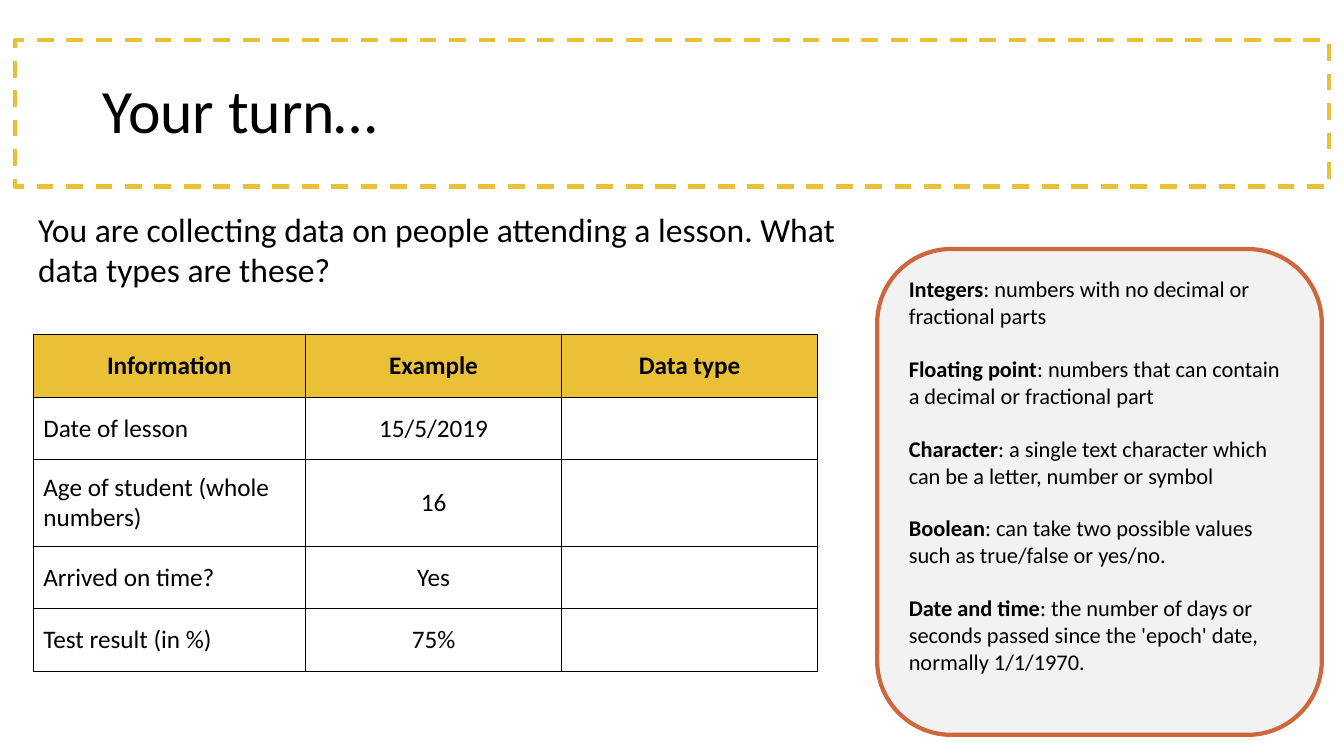
from lxml.etree import SubElement
from pptx import Presentation
from pptx.dml.color import RGBColor
from pptx.enum.dml import MSO_LINE
from pptx.enum.shapes import MSO_SHAPE
from pptx.enum.text import MSO_ANCHOR, PP_ALIGN
from pptx.oxml.ns import qn
from pptx.util import Inches, Pt

COLORS = {
    "text": "000000",
    "gold": "EAC036",
    "panel": "F2F2F2",
    "rust": "CE673B",
}
DEFINITIONS = [
    ("Integers", ": numbers with no decimal or fractional parts"),
    ("Floating point", ": numbers that can contain a decimal or fractional part"),
    ("Character", ": a single text character which can be a letter, number or symbol"),
    ("Boolean", ": can take two possible values such as true/false or yes/no."),
    ("Date and time", ": the number of days or seconds passed since the 'epoch' date, normally 1/1/1970."),
]
LESSON_ROWS = [
    ("Information", "Example", "Data type"),
    ("Date of lesson", "15/5/2019", ""),
    ("Age of student (whole numbers)", "16", ""),
    ("Arrived on time?", "Yes", ""),
    ("Test result (in %)", "75%", ""),
]


class LessonSlide:
    font_name = "Calibri"

    def __init__(self, presentation):
        self.slide = presentation.slides.add_slide(presentation.slide_layouts[6])

    def color(self, name):
        return RGBColor.from_string(COLORS[name])

    def add_run(self, paragraph, text, size, bold=False):
        run = paragraph.add_run()
        run.text = text
        run.font.name = self.font_name
        run.font.size = Pt(size)
        run.font.bold = bold
        run.font.color.rgb = self.color("text")

    def add_panel(self, kind, box, line, fill=None, dash=None):
        shape = self.slide.shapes.add_shape(kind, *map(Inches, box))
        shape.shadow.inherit = False
        if fill:
            shape.fill.solid()
            shape.fill.fore_color.rgb = self.color(fill)
        else:
            shape.fill.background()
        shape.line.color.rgb = self.color(line)
        shape.line.width = Pt(3)
        if dash:
            shape.line.dash_style = dash
        return shape

    def add_text(self, box, text, size, anchor=MSO_ANCHOR.TOP, line_spacing=None):
        frame = self.slide.shapes.add_textbox(*map(Inches, box)).text_frame
        frame.word_wrap = True
        frame.vertical_anchor = anchor
        paragraph = frame.paragraphs[0]
        paragraph.line_spacing = line_spacing
        self.add_run(paragraph, text, size)

    def add_definitions(self, box, definitions):
        shape = self.add_panel(MSO_SHAPE.ROUNDED_RECTANGLE, box, "rust", "panel")
        frame = shape.text_frame
        frame.word_wrap = True
        frame.vertical_anchor = MSO_ANCHOR.TOP
        for index, (term, meaning) in enumerate(definitions):
            paragraph = frame.add_paragraph() if index else frame.paragraphs[0]
            paragraph.alignment = PP_ALIGN.LEFT
            paragraph.space_after = Pt(18.5)
            self.add_run(paragraph, term, 16, bold=True)
            self.add_run(paragraph, meaning, 16)

    def add_borders(self, cell):
        properties = cell._tc.get_or_add_tcPr()
        for position, side in enumerate(("a:lnL", "a:lnR", "a:lnT", "a:lnB")):
            border = properties.makeelement(qn(side), {"w": str(Pt(1))})
            properties.insert(position, border)
            fill = SubElement(border, qn("a:solidFill"))
            SubElement(fill, qn("a:srgbClr"), val=COLORS["text"])

    def add_table(self, box, rows, widths, heights):
        frame = self.slide.shapes.add_table(len(rows), len(widths), *map(Inches, box))
        table = frame.table
        table.horz_banding = False
        for column, width in zip(table.columns, widths):
            column.width = Inches(width)
        for row, height in zip(table.rows, heights):
            row.height = Inches(height)
        for row_index, values in enumerate(rows):
            header = row_index == 0
            for column_index, value in enumerate(values):
                cell = table.cell(row_index, column_index)
                cell.vertical_anchor = MSO_ANCHOR.MIDDLE
                if header:
                    cell.fill.solid()
                    cell.fill.fore_color.rgb = self.color("gold")
                else:
                    cell.fill.background()
                self.add_borders(cell)
                paragraph = cell.text_frame.paragraphs[0]
                centred = header or column_index > 0
                paragraph.alignment = PP_ALIGN.CENTER if centred else PP_ALIGN.LEFT
                if value:
                    self.add_run(paragraph, value, 18, bold=header)


def main():
    presentation = Presentation()
    presentation.slide_width = Inches(13.33)
    presentation.slide_height = Inches(7.5)
    lesson = LessonSlide(presentation)
    lesson.add_panel(MSO_SHAPE.RECTANGLE, (0.15, 0.4, 13.03, 1.45), "gold", dash=MSO_LINE.DASH)
    lesson.add_text((0.92, 0.4, 11.5, 1.45), "Your turn…", 44, MSO_ANCHOR.MIDDLE, 0.9)
    lesson.add_definitions((8.7, 2.47, 4.41, 4.82), DEFINITIONS)
    lesson.add_text(
        (0.28, 2.02, 8.43, 0.91),
        "You are collecting data on people attending a lesson. What data types are these?",
        24,
    )
    lesson.add_table(
        (0.33, 3.32, 7.79, 3.33),
        LESSON_ROWS,
        widths=(2.7, 2.54, 2.54),
        heights=(0.62, 0.62, 0.86, 0.62, 0.62),
    )
    presentation.save("out.pptx")


if __name__ == "__main__":
    main()
